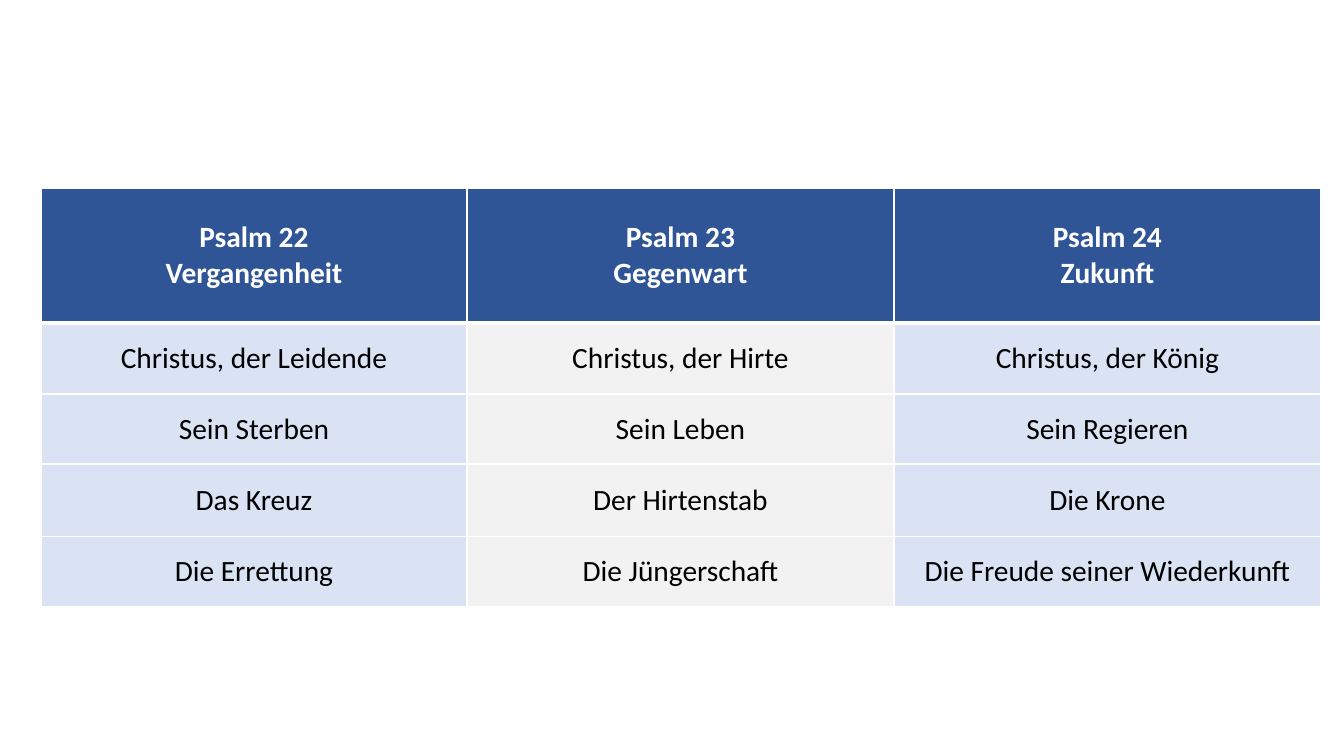
from lxml import etree
from pptx import Presentation
from pptx import util as u
from pptx.dml.color import RGBColor
from pptx.enum import text
from pptx.oxml.ns import qn

ROWS = [
    ("Psalm 22\nVergangenheit", "Psalm 23\nGegenwart", "Psalm 24\nZukunft"),
    ("Christus, der Leidende", "Christus, der Hirte", "Christus, der König"),
    ("Sein Sterben", "Sein Leben", "Sein Regieren"),
    ("Das Kreuz", "Der Hirtenstab", "Die Krone"),
    ("Die Errettung", "Die Jüngerschaft", "Die Freude seiner Wiederkunft"),
]
HIGH = [135, 71, 70, 73, 70]
WIDE = [426, 427, 427]
LEFT, TOP = 41, 188
HEX = {"head": "2F5597", "blue": "DAE3F3", "gray": "F2F2F2",
       "white": "FFFFFF", "black": "000000"}


def px(n):
    return u.Emu(round(n * 914400 / 100.8))


def color(name):
    return RGBColor.from_string(HEX[name])


def put(obj, form):
    for key, val in form.items():
        setattr(obj, key, val)


def edge(cell, sides):
    props = cell._tc.get_or_add_tcPr()
    for i, (side, pts) in enumerate(sides.items()):
        line = etree.Element(qn("a:ln" + side), w=str(u.Pt(pts)))
        fill = etree.SubElement(line, qn("a:solidFill"))
        etree.SubElement(fill, qn("a:srgbClr"), val=HEX["white"])
        props.insert(i, line)


def fill_cell(cell, words, row, col):
    head = row == 0
    put(cell, {"text": words, "vertical_anchor": text.MSO_ANCHOR.MIDDLE,
               "margin_left": px(14), "margin_right": px(14),
               "margin_top": 0, "margin_bottom": 0})
    cell.fill.solid()
    cell.fill.fore_color.rgb = color("head" if head else ("blue", "gray")[col % 2])
    for para in cell.text_frame.paragraphs:
        para.alignment = text.PP_ALIGN.CENTER
        for run in para.runs:
            put(run.font, {"name": "Calibri", "size": u.Pt(21), "bold": head})
            run.font.color.rgb = color("white" if head else "black")
    edge(cell, {"L": 1, "R": 1, "T": 3 if row == 1 else 1, "B": 3 if head else 1})


def main():
    deck = Presentation()
    put(deck, {"slide_width": px(1344), "slide_height": px(756)})
    slide = deck.slides.add_slide(deck.slide_layouts[6])
    table = slide.shapes.add_table(
        len(ROWS), len(WIDE), px(LEFT), px(TOP), px(sum(WIDE)), px(sum(HIGH))).table
    for col, wide in zip(table.columns, WIDE):
        col.width = px(wide)
    for r, (words, high) in enumerate(zip(ROWS, HIGH)):
        table.rows[r].height = px(high)
        for c, word in enumerate(words):
            fill_cell(table.cell(r, c), word, r, c)
    deck.save("out.pptx")


if __name__ == "__main__":
    main()
